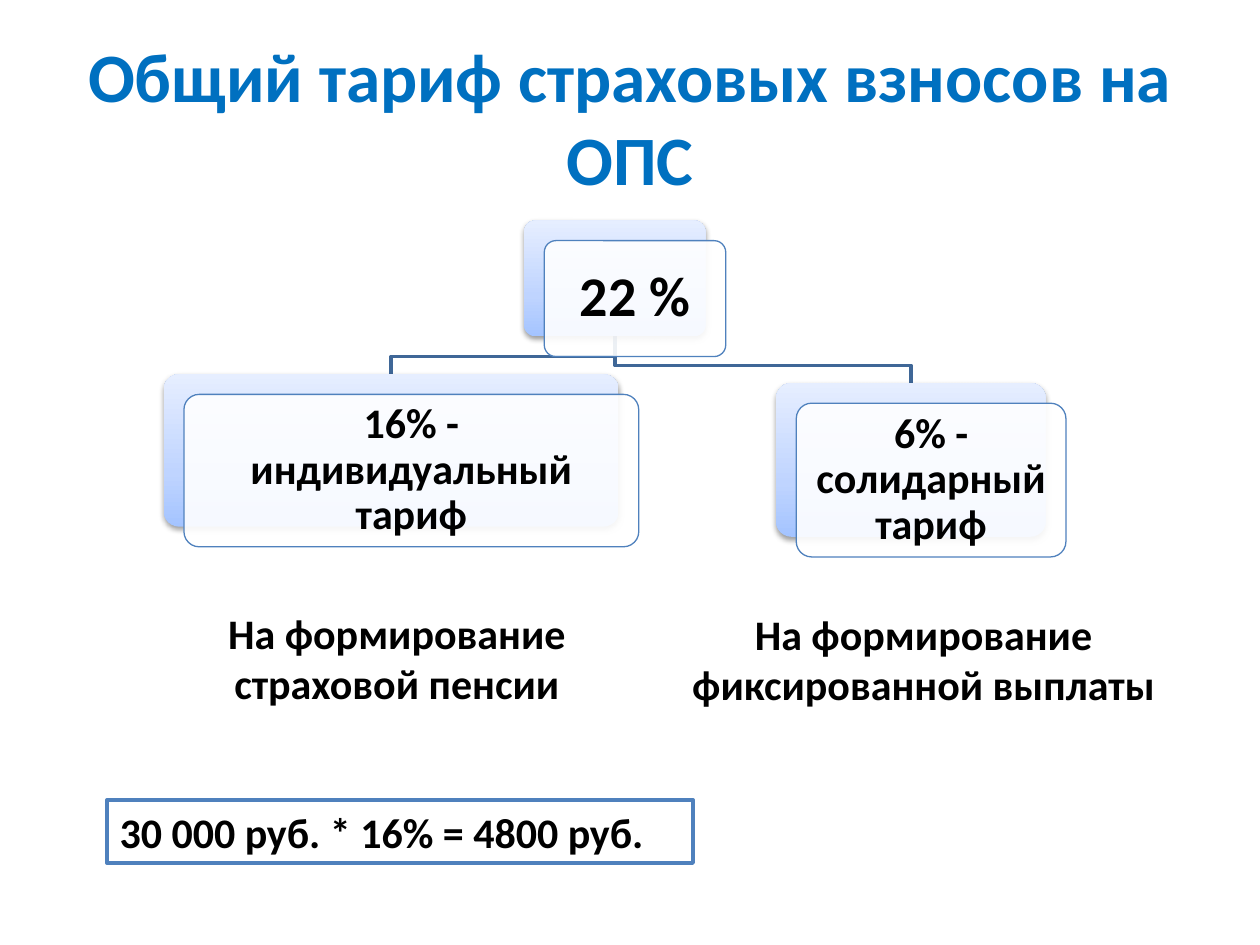
from copy import deepcopy

from lxml import etree
from pptx import Presentation
from pptx.dml.color import RGBColor
from pptx.enum import shapes, text
from pptx.oxml.ns import qn
from pptx.util import Inches, Pt

TITLE_BLUE = RGBColor(0x00, 0x70, 0xC0)
LINK_BLUE = RGBColor(0x3F, 0x67, 0x97)
EDGE_BLUE = RGBColor(0x4F, 0x81, 0xBD)
BLACK = RGBColor(0, 0, 0)
WHITE = RGBColor(0xFF, 0xFF, 0xFF)
PLATE_STOPS = (
    (0, RGBColor(0xA4, 0xC4, 0xFF)),
    (0.35, RGBColor(0xBF, 0xD4, 0xFF)),
    (1, RGBColor(0xE6, 0xEE, 0xFF)),
)
FONT = "Calibri"
CARD_SHIFT = 0.16
BEND_GAP = 0.14

ROOT = (4.16, 1.75, 1.44, 0.92)
CHILDREN = (
    ((1.3, 2.97, 3.61, 1.21), "16% - индивидуальный тариф"),
    ((6.16, 3.04, 2.14, 1.22), "6% - солидарный тариф"),
)
PURPOSES = (
    ((1.14, 4.77, 4.02, 0.91), "На формирование страховой пенсии"),
    ((5.32, 4.78, 4.02, 0.91), "На формирование фиксированной выплаты"),
)


def write(tf, words, size, color=BLACK, align=text.PP_ALIGN.CENTER):
    """Write one bold paragraph and return it."""
    tf.word_wrap = True
    p = tf.paragraphs[0]
    p.alignment = align
    r = p.add_run()
    r.text = words
    r.font.name = FONT
    r.font.size = Pt(size)
    r.font.bold = True
    r.font.color.rgb = color
    return p


def add_title(slide, words):
    """Fill and place the title placeholder."""
    sp = slide.shapes.title
    sp.left, sp.top, sp.width, sp.height = map(Inches, (0.5, 0.3, 9, 1.25))
    tf = sp.text_frame
    tf.auto_size = text.MSO_AUTO_SIZE.NONE
    tf.vertical_anchor = text.MSO_ANCHOR.MIDDLE
    write(tf, words, 39.6, TITLE_BLUE)


def add_link(slide, parent, child):
    """Draw an elbow line from the parent's bottom to the child's top."""
    x1, y1 = parent[0] + parent[2] / 2, parent[1] + parent[3]
    x2, y2 = child[0] + child[2] / 2, child[1]
    bend = y2 - BEND_GAP
    builder = slide.shapes.build_freeform(Inches(x1), Inches(y1), scale=1.0)
    corners = ((x1, bend), (x2, bend), (x2, y2))
    builder.add_line_segments([(Inches(x), Inches(y)) for x, y in corners], close=False)
    sp = builder.convert_to_shape()
    sp.fill.background()
    sp.line.color.rgb = LINK_BLUE
    sp.line.width = Pt(2)
    sp.shadow.inherit = False


def add_box(slide, kind, box):
    """Add a preset shape without the theme shadow."""
    sp = slide.shapes.add_shape(kind, *map(Inches, box))
    sp.shadow.inherit = False
    return sp


def add_rounded(slide, box):
    """Add a rounded box with small corners."""
    sp = add_box(slide, shapes.MSO_SHAPE.ROUNDED_RECTANGLE, box)
    sp.adjustments[0] = 0.1
    return sp


def add_plate(slide, box):
    """Add the shaded plate that lies behind a card."""
    sp = add_rounded(slide, box)
    sp.line.fill.background()
    sp.fill.gradient()
    sp.fill.gradient_angle = 90
    stops = sp._element.spPr.find(".//" + qn("a:gsLst"))
    stops.append(deepcopy(stops[-1]))
    for stop, (position, color) in zip(sp.fill.gradient_stops, PLATE_STOPS):
        stop.position = position
        stop.color.rgb = color
    effects = sp._element.spPr.find(qn("a:effectLst"))
    shadow = etree.SubElement(effects, qn("a:outerShdw"), blurRad="40000",
                              dist="20000", dir="5400000", rotWithShape="0")
    color = etree.SubElement(shadow, qn("a:srgbClr"), val="000000")
    etree.SubElement(color, qn("a:alpha"), val="38000")


def add_card(slide, box, words, size, inset):
    """Add a plate with a translucent card holding text over it."""
    add_plate(slide, box)
    left, top, width, height = box
    sp = add_rounded(slide, (left + CARD_SHIFT, top + CARD_SHIFT, width, height))
    sp.fill.solid()
    sp.fill.fore_color.rgb = WHITE
    color = sp._element.spPr.find(qn("a:solidFill"))[0]
    etree.SubElement(color, qn("a:alpha"), val="90000")
    sp.line.color.rgb = EDGE_BLUE
    sp.line.width = Pt(0.75)
    tf = sp.text_frame
    tf.margin_left = tf.margin_right = tf.margin_top = tf.margin_bottom = Inches(inset)
    tf.vertical_anchor = text.MSO_ANCHOR.MIDDLE
    write(tf, words, size).line_spacing = 0.9


def add_purpose(slide, box, words):
    """Add a centred caption below a card."""
    sp = slide.shapes.add_textbox(*map(Inches, box))
    write(sp.text_frame, words, 24)


def add_example(slide, box, words):
    """Add the outlined calculation example."""
    sp = add_box(slide, shapes.MSO_SHAPE.RECTANGLE, box)
    sp.fill.solid()
    sp.fill.fore_color.rgb = WHITE
    sp.line.color.rgb = EDGE_BLUE
    sp.line.width = Pt(2)
    write(sp.text_frame, words, 24, align=text.PP_ALIGN.LEFT)


def main():
    """Build the slide and save it."""
    prs = Presentation()
    prs.slide_width, prs.slide_height = Inches(10), Inches(7.5)
    slide = prs.slides.add_slide(prs.slide_layouts[5])
    add_title(slide, "Общий тариф страховых взносов на ОПС")
    for box, _ in reversed(CHILDREN):
        add_link(slide, ROOT, box)
    add_card(slide, ROOT, "22 %", 32, 0.13)
    for box, words in CHILDREN:
        add_card(slide, box, words, 24, 0.1)
    for box, words in PURPOSES:
        add_purpose(slide, box, words)
    add_example(slide, (0.85, 6.35, 4.65, 0.5), "30 000 руб. * 16% = 4800 руб.")
    prs.save("out.pptx")


if __name__ == "__main__":
    main()
